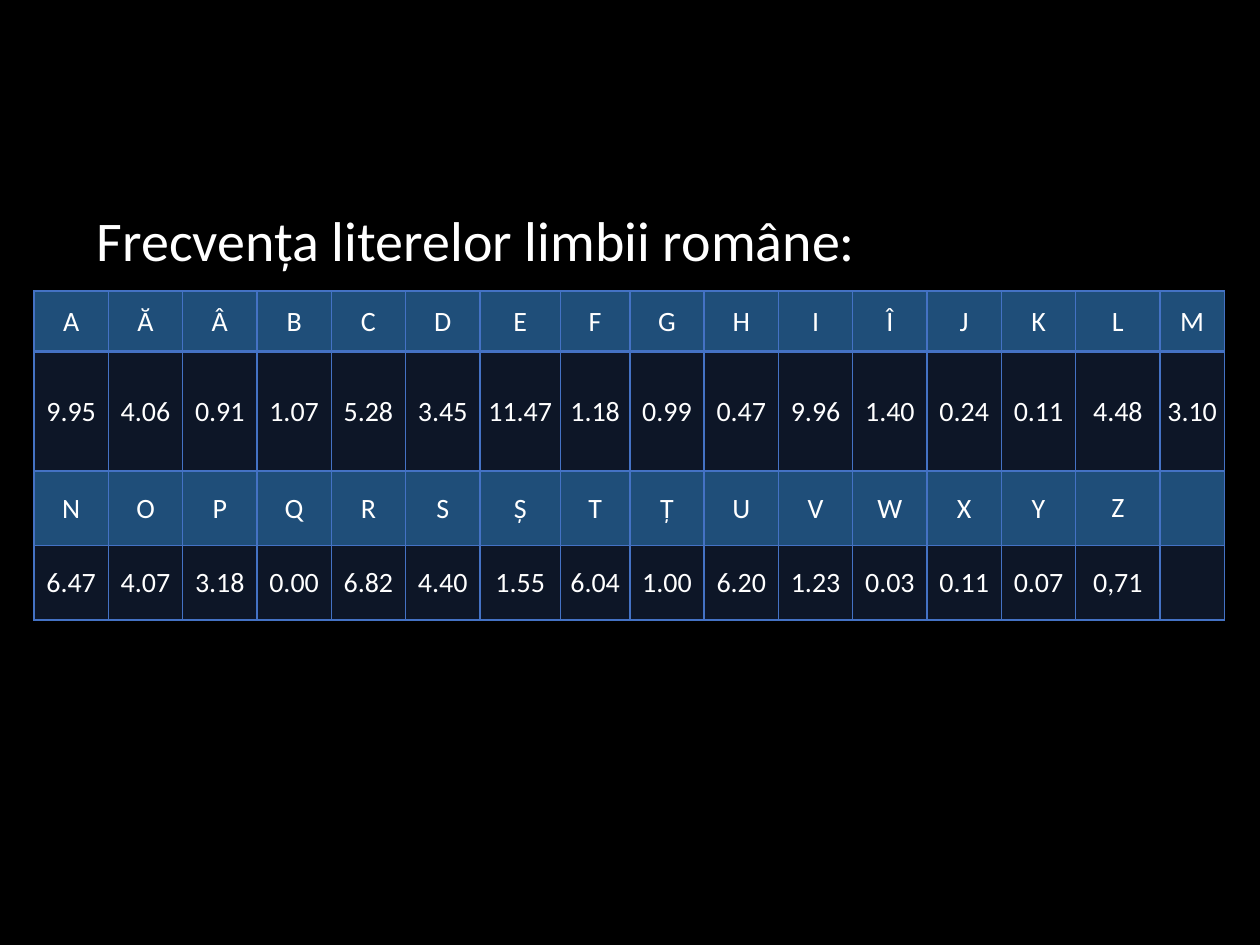
from dataclasses import dataclass

from lxml import etree
from pptx import Presentation
from pptx.dml.color import RGBColor
from pptx.enum.text import MSO_ANCHOR, PP_ALIGN
from pptx.oxml.ns import qn
from pptx.util import Inches, Pt

MIDDLE = MSO_ANCHOR.MIDDLE
LEFT, CENTER = PP_ALIGN.LEFT, PP_ALIGN.CENTER


@dataclass(frozen=True)
class Theme:
    font: str = "Calibri"
    background: str = "000000"
    text: str = "FFFFFF"
    letter_fill: str = "1F4E79"
    accent: str = "4472C4"
    value_opacity: int = 20
    title_size: int = 32
    cell_size: int = 16
    rule: int = 1
    heavy_rule: int = 2


THEME = Theme()
PAGE_WIDTH, PAGE_HEIGHT = 10, 7.5
TITLE_BOX = (0.67, 1.58, 8.66, 0.71)
TABLE_BOX = (0.27, 2.31, 9.45, 2.61)

# Relative column widths and row heights of the frequency table
COLUMNS = [59] * 6 + [64, 55] + [59] * 6 + [67, 51]
ROWS = [48, 95, 59, 59]
TIGHT = {"margin_left": 0.01, "margin_top": 0.01, "margin_right": 0.01, "margin_bottom": 0}
ROOMY = {"margin_left": 0.07, "margin_top": 0.04, "margin_right": 0.07, "margin_bottom": 0.04}

LETTERS = "A Ă Â B C D E F G H I Î J K L M N O P Q R S Ș T Ț U V W X Y Z".split()
VALUES = (
    "9.95 4.06 0.91 1.07 5.28 3.45 11.47 1.18 0.99 0.47 9.96 1.40 0.24 0.11 4.48 3.10 "
    "6.47 4.07 3.18 0.00 6.82 4.40 1.55 6.04 1.00 6.20 1.23 0.03 0.11 0.07 0,71"
).split()


def write_text(para, text, size, align):
    para.alignment = align
    span = para.add_run()
    span.text = text
    formats = {"name": THEME.font, "size": Pt(size)}
    for name, value in formats.items():
        setattr(span.font, name, value)
    span.font.color.rgb = RGBColor.from_string(THEME.text)


def draw_title(page, bounds, text):
    box = page.shapes.add_textbox(*(Inches(length) for length in bounds))
    frame = box.text_frame
    frame.word_wrap = True
    frame.vertical_anchor = MIDDLE
    para = frame.paragraphs[0]
    para.line_spacing = 0.9
    write_text(para, text, THEME.title_size, LEFT)


def set_borders(cell, widths):
    """Put the four edge lines, in schema order, ahead of the cell fill."""
    properties = cell._tc.get_or_add_tcPr()
    for index, side in enumerate(("L", "R", "T", "B")):
        line = etree.Element(qn(f"a:ln{side}"), w=str(Pt(widths.get(side, THEME.rule))))
        fill = etree.SubElement(line, qn("a:solidFill"))
        etree.SubElement(fill, qn("a:srgbClr"), val=THEME.accent)
        properties.insert(index, line)


def fill_cell(cell, color, opacity=100):
    cell.fill.solid()
    cell.fill.fore_color.rgb = RGBColor.from_string(color)
    if opacity < 100:
        tint = cell._tc.tcPr.find(f".//{qn('a:srgbClr')}")
        etree.SubElement(tint, qn("a:alpha"), val=str(opacity * 1000))


def draw_frequencies(page, bounds):
    left, top, width, height = bounds
    frame = page.shapes.add_table(
        len(ROWS), len(COLUMNS), Inches(left), Inches(top), Inches(width), Inches(height))
    table = frame.table
    table.first_row = table.horz_banding = False
    for column, share in zip(table.columns, COLUMNS):
        column.width = Inches(width * share / sum(COLUMNS))
    for row, share in zip(table.rows, ROWS):
        row.height = Inches(height * share / sum(ROWS))

    # Letter rows alternate with value rows, each pair holding one run of letters
    count = len(COLUMNS)
    for row in range(len(ROWS)):
        is_letter = row % 2 == 0
        source = LETTERS if is_letter else VALUES
        edges = {0: {"B": THEME.heavy_rule}, 1: {"T": THEME.heavy_rule}}.get(row, {})
        for column in range(count):
            cell = table.cell(row, column)
            cell.vertical_anchor = MIDDLE
            margins = ROOMY if row >= 2 and column >= count - 2 else TIGHT
            for name, value in margins.items():
                setattr(cell, name, Inches(value))
            if is_letter:
                fill_cell(cell, THEME.letter_fill)
            else:
                fill_cell(cell, THEME.accent, THEME.value_opacity)
            set_borders(cell, edges)
            index = row // 2 * count + column
            if index < len(source):
                write_text(cell.text_frame.paragraphs[0], source[index], THEME.cell_size, CENTER)


def main():
    deck = Presentation()
    deck.slide_width, deck.slide_height = Inches(PAGE_WIDTH), Inches(PAGE_HEIGHT)
    page = deck.slides.add_slide(deck.slide_layouts[6])
    page.background.fill.solid()
    page.background.fill.fore_color.rgb = RGBColor.from_string(THEME.background)
    draw_title(page, TITLE_BOX, "Frecvența literelor limbii române:")
    draw_frequencies(page, TABLE_BOX)
    deck.save("out.pptx")


if __name__ == "__main__":
    main()
